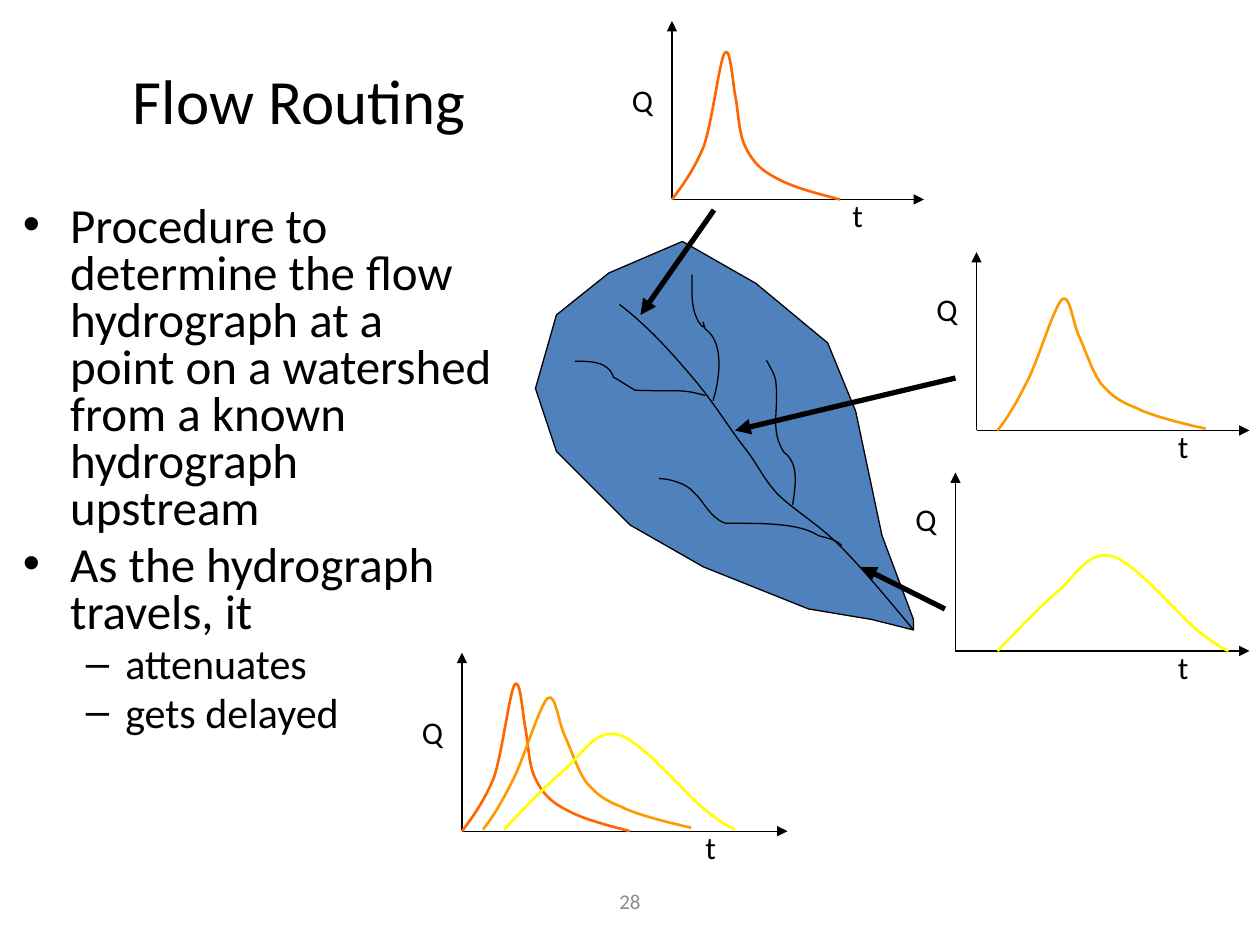
from dataclasses import dataclass

from lxml import etree
from pptx import Presentation
from pptx.dml.color import RGBColor
from pptx.enum.shapes import MSO_CONNECTOR
from pptx.enum.text import MSO_ANCHOR, PP_ALIGN
from pptx.oxml.ns import qn
from pptx.util import Pt

Point = tuple[float, float]
Points = list[Point]

BLACK = RGBColor(0x00, 0x00, 0x00)
GREY = RGBColor(0x8C, 0x8C, 0x8C)
BLUE = RGBColor(0x4F, 0x81, 0xBD)
RED_ORANGE = RGBColor(0xFF, 0x66, 0x00)
ORANGE = RGBColor(0xFF, 0x99, 0x00)
YELLOW = RGBColor(0xFF, 0xFF, 0x00)
FONT = "Calibri"
STRAIGHT = MSO_CONNECTOR.STRAIGHT
TOP, MIDDLE = MSO_ANCHOR.TOP, MSO_ANCHOR.MIDDLE
LEFT, CENTER = PP_ALIGN.LEFT, PP_ALIGN.CENTER
AXIS_HEIGHT = 102


@dataclass
class Wave:
    """Bezier points relative to the start of the flow."""
    color: RGBColor
    points: Points


@dataclass
class Hydrograph:
    origin: Point
    length: float
    q_rise: float
    t_left: float
    waves: list[tuple[Wave, Point]]


@dataclass
class Bullet:
    text: str
    size: float
    char: str
    margin: float
    hanging: float


# Flow waves, from upstream to downstream
UPPER = Wave(RED_ORANGE, [
    (0, 0), (6, -8), (12, -16), (18, -30), (23, -44), (27, -78.5), (30, -83.5),
    (33, -89), (34.5, -69), (36, -60), (38, -50.5), (38, -37.5), (42, -30),
    (46, -21.5), (51, -16.5), (60, -12), (69, -7), (82.5, -3.5), (96, 0)])
MIDWAY = Wave(ORANGE, [
    (0, 0), (6.5, -8), (12, -18), (18, -30), (24, -42.5), (32.5, -71), (37, -75),
    (41.5, -78.5), (43, -61), (47, -53), (50.5, -45.5), (54, -34), (59, -27),
    (65, -20), (69, -17), (79, -13), (88.5, -8), (110, -3), (119, -1)])
LOWER = Wave(YELLOW, [
    (0, 0), (6, -6), (23.5, -25), (34.5, -34), (45, -43.5), (52.5, -58), (66, -54),
    (79, -50), (103, -21), (114, -12), (124.5, -3.5), (128.5, -1.5), (132, 0)])

STATIONS = [
    Hydrograph((384, 114), 144, 71, 480, [(UPPER, (384, 114))]),
    Hydrograph((558, 246), 156, 84, 666, [(MIDWAY, (570, 246))]),
    Hydrograph((546, 372), 168, 90, 666, [(LOWER, (570, 372))]),
]
COMBINED = Hydrograph((264, 475), 186, 71, 396, [
    (UPPER, (264, 475)), (MIDWAY, (276, 474)), (LOWER, (288, 474))])

BASIN = [
    (462, 348), (402, 324), (360, 300), (318, 258), (306, 222), (318, 180),
    (348, 156), (390, 138), (432, 162), (473, 196), (489, 235), (504, 306),
    (522, 354), (522, 360), (498, 354)]
STREAMS = [
    [(522, 360), (507.5, 342.5), (493, 325), (480, 312), (467, 299), (453.5, 291.5),
     (444, 282), (435, 272), (433, 265), (424, 254), (416, 243.5), (407.5, 229.5),
     (396, 216), (384.5, 202.5), (371, 187), (354, 174)],
    [(481, 312), (478, 308), (471.5, 307.5), (467.5, 306), (454.5, 297.5),
     (426, 299.5), (414.5, 299), (405.5, 296), (402.5, 286.5), (396, 281),
     (392.5, 276.5), (382.5, 273.5), (376.5, 273.5)],
    [(453, 288.5), (454.5, 278), (457, 265), (448, 258.5), (440, 246), (445, 236),
     (443.5, 219.5), (443.5, 215), (440, 209.5), (438, 206)],
    [(403, 226), (388, 222), (391.5, 224), (363, 223), (358.5, 220.5), (355, 218),
     (350.5, 215.5), (348, 206), (335.5, 206.5), (328.5, 206.5)],
    [(407.5, 229), (411, 217.5), (414.5, 196), (403, 188), (399.5, 177),
     (405.5, 193.5), (399, 183.5), (394.5, 175.5), (395.5, 165), (395.5, 157)],
]
POINTERS = [((408, 120), (366, 180)), ((546, 216), (420, 246)), ((540, 348), (492, 324))]

BULLETS = [
    Bullet("Procedure to determine the flow hydrograph at a point on a watershed "
           "from a known hydrograph upstream", 28, "•", 27, 27),
    Bullet("As the hydrograph travels, it", 28, "•", 27, 27),
    Bullet("attenuates", 24, "–", 58.5, 22.5),
    Bullet("gets delayed", 24, "–", 58.5, 22.5),
]


def style_runs(p, size: float, color: RGBColor) -> None:
    for r in p.runs:
        r.font.name, r.font.size = FONT, Pt(size)
        r.font.color.rgb = color


def add_box(slide, left: float, top: float, width: float, height: float, anchor=TOP):
    box = slide.shapes.add_textbox(Pt(left), Pt(top), Pt(width), Pt(height))
    tf = box.text_frame
    tf.word_wrap, tf.vertical_anchor = True, anchor
    return tf


def add_label(slide, text: str, left: float, top: float, width: float, height: float,
              size: float, color=BLACK, anchor=TOP, align=LEFT) -> None:
    p = add_box(slide, left, top, width, height, anchor).paragraphs[0]
    p.text, p.alignment = text, align
    style_runs(p, size, color)


def add_bullets(slide, bullets: list[Bullet]) -> None:
    tf = add_box(slide, 6, 114, 282, 342)
    for i, b in enumerate(bullets):
        p = tf.add_paragraph() if i else tf.paragraphs[0]
        p.text = b.text
        p.line_spacing, p.space_before = 0.8, Pt(b.size * 0.2)
        style_runs(p, b.size, BLACK)
        ppr = p.runs[0].font and p._p.get_or_add_pPr()
        ppr.set("marL", str(Pt(b.margin)))
        ppr.set("indent", str(-Pt(b.hanging)))
        etree.SubElement(ppr, qn("a:buFont"), typeface="Arial")
        etree.SubElement(ppr, qn("a:buChar"), char=b.char)


def add_arrow(slide, start: Point, end: Point, width: float) -> None:
    cn = slide.shapes.add_connector(STRAIGHT, *map(Pt, start + end))
    cn.line.color.rgb, cn.line.width = BLACK, Pt(width)
    sppr = cn.element.spPr
    etree.SubElement(sppr.find(qn("a:ln")), qn("a:tailEnd"), type="triangle")
    etree.SubElement(sppr, qn("a:effectLst"))


def add_outline(slide, points: Points, color: RGBColor, width: float, close: bool = False):
    start, *rest = [(Pt(x), Pt(y)) for x, y in points]
    builder = slide.shapes.build_freeform(*start)
    builder.add_line_segments(rest, close=close)
    sp = builder.convert_to_shape()
    sp.shadow.inherit = False
    sp.line.color.rgb, sp.line.width = color, Pt(width)
    return sp


def add_curve(slide, points: Points, color: RGBColor, width: float) -> None:
    """Draw a Bezier curve: each three points after the first make one segment."""
    sp = add_outline(slide, points, color, width)
    sp.fill.background()
    segments = list(sp.element.iter(qn("a:lnTo")))
    outline = segments[0].getparent()
    for i in range(0, len(segments), 3):
        bezier = etree.SubElement(outline, qn("a:cubicBezTo"))
        for seg in segments[i:i + 3]:
            bezier.append(seg[0])
            outline.remove(seg)


def add_hydrograph(slide, h: Hydrograph) -> None:
    x, y = h.origin
    add_arrow(slide, h.origin, (x, y - AXIS_HEIGHT), 0.75)
    add_arrow(slide, h.origin, (x + h.length, y), 0.75)
    for wave, (x0, y0) in h.waves:
        add_curve(slide, [(x0 + dx, y0 + dy) for dx, dy in wave.points], wave.color, 1.5)
    add_label(slide, "Q", x - 30, y - h.q_rise, 24, 29, 18)
    add_label(slide, "t", h.t_left, y - 5.5, 24, 29, 18)


def main() -> None:
    prs = Presentation()
    prs.slide_width, prs.slide_height = Pt(720), Pt(540)
    s = prs.slides.add_slide(prs.slide_layouts[6])

    # Text
    add_label(s, "28", 246, 500.5, 228, 29, 12, GREY, MIDDLE, CENTER)
    add_label(s, "Flow Routing", 6, 34, 330, 45, 36, BLACK, MIDDLE, CENTER)
    add_bullets(s, BULLETS)

    # Hydrographs at the three stations
    for station in STATIONS:
        add_hydrograph(s, station)

    # Watershed with its streams
    basin = add_outline(s, BASIN, BLACK, 0.75, close=True)
    basin.fill.solid()
    basin.fill.fore_color.rgb = BLUE
    for stream in STREAMS:
        add_curve(s, stream, BLACK, 0.75)
    for start, end in POINTERS:
        add_arrow(s, start, end, 3)

    # All waves together
    add_hydrograph(s, COMBINED)
    prs.save("out.pptx")


if __name__ == "__main__":
    main()
